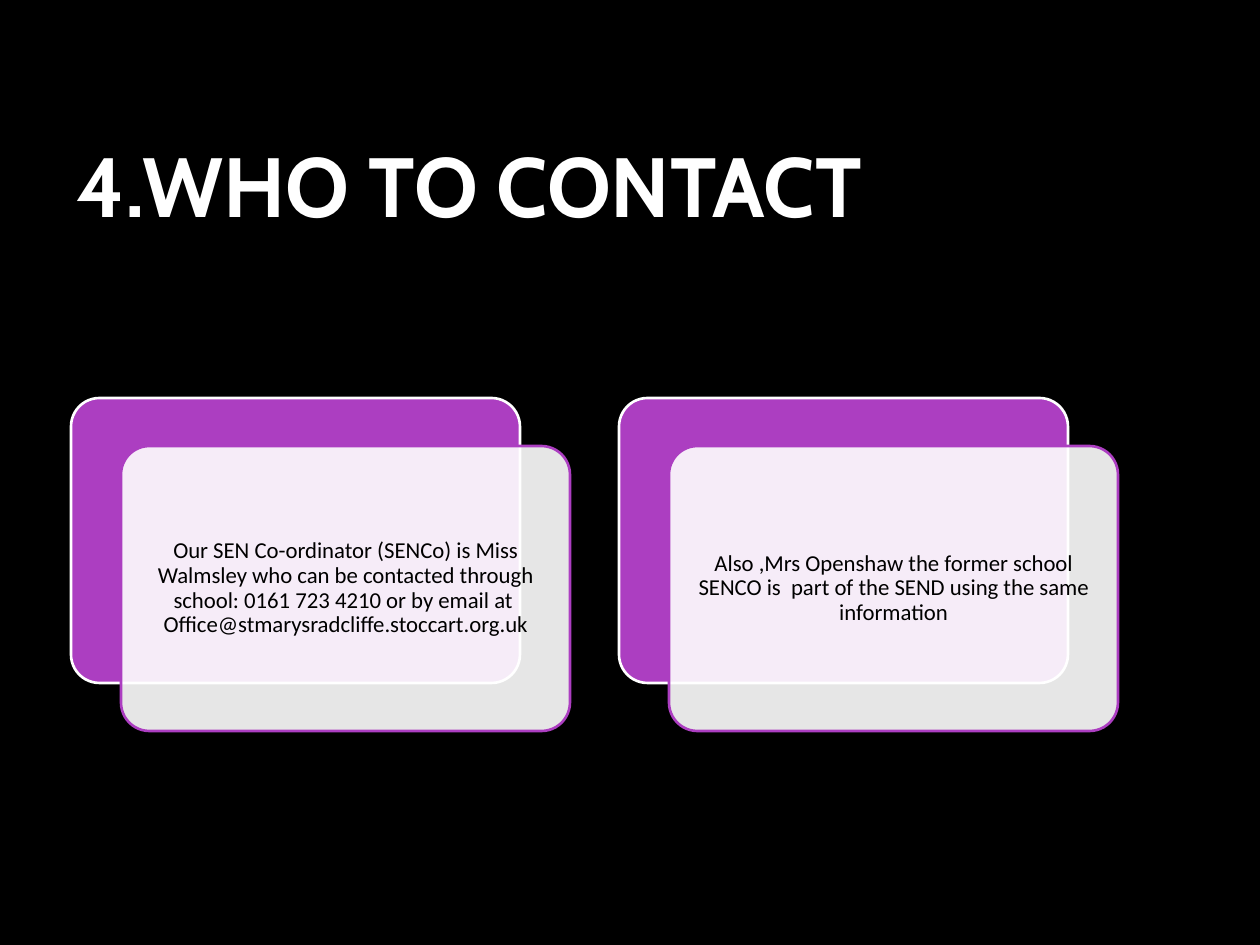
from lxml import etree
from pptx import Presentation, util as u
from pptx.dml.color import RGBColor
from pptx.enum import shapes, text
from pptx.oxml.ns import qn

EMU_PER_PX = 914400 / 126
PURPLE, WHITE, BLACK = "AC3EC1", "FFFFFF", "000000"
INSET = 6
CARD_TEXTS = [
    "Our SEN Co-ordinator (SENCo) is Miss Walmsley who can be contacted "
    "through school: 0161 723 4210 or by email at  "
    "Office@stmarysradcliffe.stoccart.org.uk",
    "Also ,Mrs Openshaw the former school SENCO is  part of the SEND "
    "using the same information",
]


def px(length):
    return u.Emu(round(length * EMU_PER_PX))


def color(value):
    return RGBColor.from_string(value)


def set_frame(frame):
    """Give a text frame equal insets, wrapping and middle anchoring."""
    frame.margin_left = frame.margin_right = px(INSET)
    frame.margin_top = frame.margin_bottom = px(INSET)
    frame.word_wrap = True
    frame.auto_size = text.MSO_AUTO_SIZE.NONE
    frame.vertical_anchor = text.MSO_ANCHOR.MIDDLE


def set_font(paragraph, name, size, value, bold=False):
    font = paragraph.font
    font.name, font.size, font.bold = name, u.Pt(size), bold
    font.color.rgb = color(value)


def add_title(slide, left, top, width, height, wording):
    title = slide.shapes.title
    title.left, title.top = px(left), px(top)
    title.width, title.height = px(width), px(height)
    title.text_frame.text = wording
    set_frame(title.text_frame)
    paragraph = title.text_frame.paragraphs[0]
    paragraph.alignment = text.PP_ALIGN.LEFT
    set_font(paragraph, "Cabin", 48, WHITE, bold=True)


def add_panel(slide, left, top, width, height, fill, line):
    panel = slide.shapes.add_shape(
        shapes.MSO_SHAPE.ROUNDED_RECTANGLE,
        px(left), px(top), px(width), px(height))
    panel.adjustments[0] = 0.1
    panel.shadow.inherit = False
    panel.fill.solid()
    panel.fill.fore_color.rgb = color(fill)
    panel.line.color.rgb = color(line)
    panel.line.width = u.Pt(1.5)
    return panel


def set_opacity(shape, percent):
    fill_color = shape.element.spPr.find(qn("a:solidFill"))[0]
    etree.SubElement(fill_color, qn("a:alpha"), val=str(percent * 1000))


def add_card(slide, left, top, width, height, wording):
    """Add a purple panel with a translucent text panel offset over it."""
    shift_x, shift_y = 50, 48
    panel_size = width - shift_x, height - shift_y
    add_panel(slide, left, top, *panel_size, PURPLE, WHITE)
    front = add_panel(slide, left + shift_x, top + shift_y, *panel_size,
                      WHITE, PURPLE)
    set_opacity(front, 90)
    front.text_frame.text = wording
    set_frame(front.text_frame)
    paragraph = front.text_frame.paragraphs[0]
    paragraph.alignment = text.PP_ALIGN.CENTER
    paragraph.line_spacing = 0.9
    set_font(paragraph, "Calibri", 13, BLACK)


def add_cards(slide, left, top, width, height, gap):
    card_width = (width - gap * (len(CARD_TEXTS) - 1)) // len(CARD_TEXTS)
    for index, wording in enumerate(CARD_TEXTS):
        add_card(slide, left + index * (card_width + gap), top,
                 card_width, height, wording)


def main():
    presentation = Presentation()
    presentation.slide_width, presentation.slide_height = px(1260), px(945)
    slide = presentation.slides.add_slide(presentation.slide_layouts[5])
    slide.background.fill.solid()
    slide.background.fill.fore_color.rgb = color(BLACK)
    add_title(slide, 71, 84, 1047, 200, "4.WHO TO CONTACT")
    add_cards(slide, 71, 398, 1047, 333, gap=49)
    presentation.save("out.pptx")


if __name__ == "__main__":
    main()
